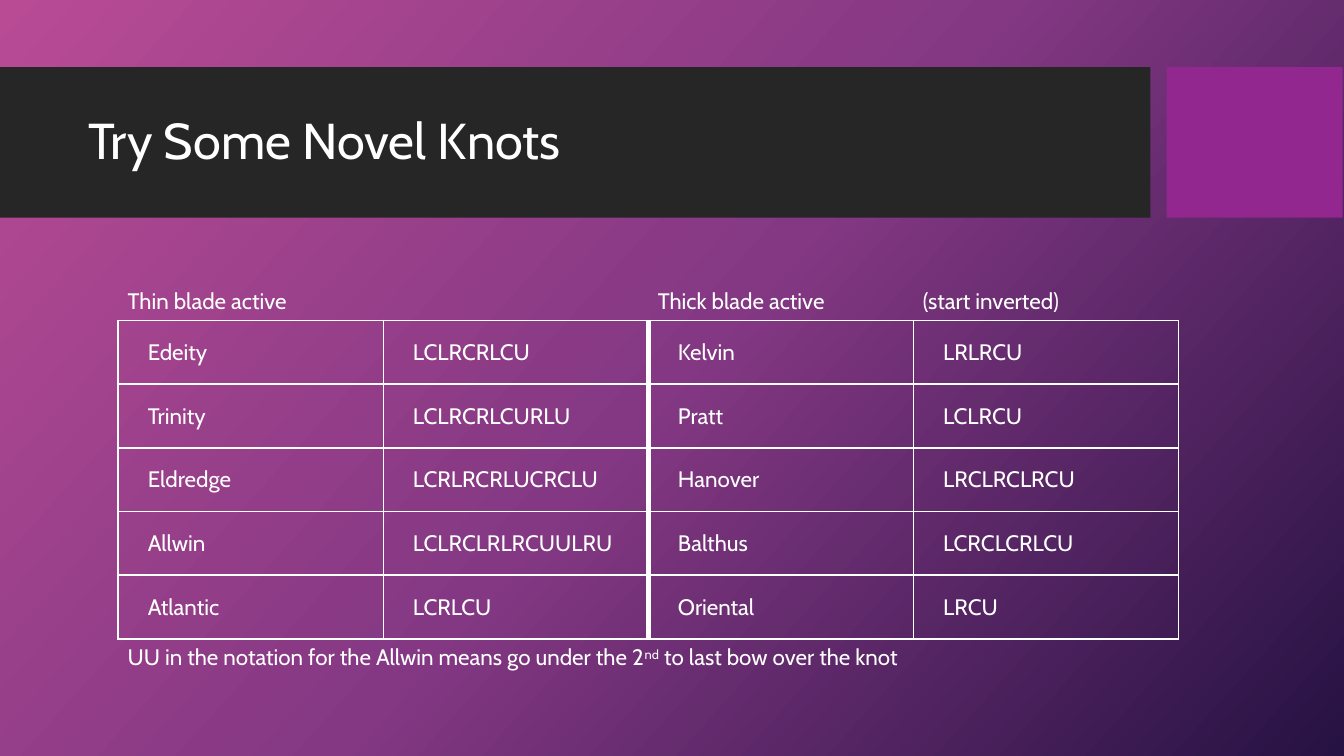
from copy import deepcopy

from lxml import etree
from pptx import Presentation
from pptx.dml import color
from pptx.enum import shapes, text
from pptx.oxml import ns
from pptx.util import Inches, Pt

TITLE = "Try Some Novel Knots"
HEADINGS = ("Thin blade active", "", "Thick blade active", "(start inverted)")
KNOTS = [
    ("Edeity", "LCLRCRLCU", "Kelvin", "LRLRCU"),
    ("Trinity", "LCLRCRLCURLU", "Pratt", "LCLRCU"),
    ("Eldredge", "LCRLRCRLUCRCLU", "Hanover", "LRCLRCLRCU"),
    ("Allwin", "LCLRCLRLRCUULRU", "Balthus", "LCRCLCRLCU"),
    ("Atlantic", "LCRLCU", "Oriental", "LRCU"),
]
NOTE = [
    ("UU in the notation for the Allwin means go under the 2", False),
    ("nd", True),
    (" to last bow over the knot", False),
]
COLORS = {"text": "FFFFFF", "band": "262626", "accent": "92278F"}
BACKDROP = [(0, "B94B95"), (0.5, "843883"), (1, "261243")]
BACKDROP_ANGLE = 42
BANDS = [(0, 8.56, "band"), (8.68, 1.31, "accent")]
FONT = "Cabin"
NO_GRID_STYLE = "{2D5ABB26-0587-4C30-8999-92F81FD0307C}"
SLIDE_WIDTH = 10
SLIDE_HEIGHT = SLIDE_WIDTH * 9 / 16
TABLE_WIDTH, TABLE_HEIGHT = 7.89, 3.32
THIN, THICK = 1, 3


def rgb(name):
    return color.RGBColor.from_string(COLORS[name])


def style_font(font, size):
    font.name = FONT
    font.size = Pt(size)
    font.color.rgb = rgb("text")


def paint_background(page):
    fill = page.background.fill
    fill.gradient()
    stop_list = next(page.element.iter(ns.qn("a:gsLst")))
    stop_list.append(deepcopy(stop_list[0]))
    for stop, (position, value) in zip(fill.gradient_stops, BACKDROP):
        stop.position = position
        stop.color.rgb = color.RGBColor.from_string(value)
    fill.gradient_angle = 360 - BACKDROP_ANGLE


def add_band(page, left, width, name):
    band = page.shapes.add_shape(
        shapes.MSO_SHAPE.RECTANGLE, Inches(left), Inches(0.5), Inches(width), Inches(1.12)
    )
    band.shadow.inherit = False
    band.fill.solid()
    band.fill.fore_color.rgb = rgb(name)
    band.line.fill.background()


def add_title(page):
    box = page.shapes.add_textbox(Inches(0.56), Inches(0.62), Inches(7.89), Inches(0.89))
    frame = box.text_frame
    frame.word_wrap = True
    frame.vertical_anchor = text.MSO_ANCHOR.MIDDLE
    frame.text = TITLE
    frame.paragraphs[0].line_spacing = 0.9
    style_font(frame.paragraphs[0].runs[0].font, 27)


def set_borders(cell, widths):
    properties = cell._tc.get_or_add_tcPr()
    for side in "LRTB":
        if side in widths:
            line = etree.SubElement(properties, ns.qn(f"a:ln{side}"), w=str(Pt(widths[side])))
            paint = etree.SubElement(line, ns.qn("a:solidFill"))
            etree.SubElement(paint, ns.qn("a:srgbClr"), val=COLORS["text"])


def format_cell(cell, anchor, left_margin, borders):
    cell.vertical_anchor = anchor
    cell.margin_left = Inches(left_margin)
    cell.margin_right = Inches(0.07)
    cell.margin_top = cell.margin_bottom = Inches(0.04)
    set_borders(cell, borders)
    cell.fill.background()
    for para in cell.text_frame.paragraphs:
        style_font(para.font, 12)
        for span in para.runs:
            style_font(span.font, 12)


def add_knot_table(page):
    row_count, column_count = len(KNOTS) + 2, len(HEADINGS)
    frame = page.shapes.add_table(
        row_count, column_count, Inches(0.88), Inches(1.91),
        Inches(TABLE_WIDTH), Inches(TABLE_HEIGHT),
    )
    table = frame.table
    table.first_row = table.horz_banding = False
    next(frame.element.iter(ns.qn("a:tableStyleId"))).text = NO_GRID_STYLE
    for column in table.columns:
        column.width = Inches(TABLE_WIDTH / column_count)
    for row in table.rows:
        row.height = Inches(TABLE_HEIGHT / row_count)

    for index, heading in enumerate(HEADINGS):
        cell = table.cell(0, index)
        cell.text = heading
        format_cell(cell, text.MSO_ANCHOR.BOTTOM, 0.07, {"B": THIN})

    for row_index, knot in enumerate(KNOTS, 1):
        for index, entry in enumerate(knot):
            cell = table.cell(row_index, index)
            cell.text = entry
            borders = dict.fromkeys("LRTB", THIN)
            if index == 1:
                borders["R"] = THICK
            elif index == 2:
                borders["L"] = THICK
            format_cell(cell, text.MSO_ANCHOR.MIDDLE, 0.22, borders)

    note_row = row_count - 1
    note = table.cell(note_row, 0)
    note.merge(table.cell(note_row, column_count - 1))
    para = note.text_frame.paragraphs[0]
    for words, raised in NOTE:
        span = para.add_run()
        span.text = words
        if raised:
            span.font._element.set("baseline", "30000")
    for index in range(column_count):
        format_cell(table.cell(note_row, index), text.MSO_ANCHOR.TOP, 0.07, {"T": THIN})


def main():
    deck = Presentation()
    deck.slide_width, deck.slide_height = Inches(SLIDE_WIDTH), Inches(SLIDE_HEIGHT)
    page = deck.slides.add_slide(deck.slide_layouts[6])
    paint_background(page)
    for band in BANDS:
        add_band(page, *band)
    add_title(page)
    add_knot_table(page)
    deck.save("out.pptx")


if __name__ == "__main__":
    main()
